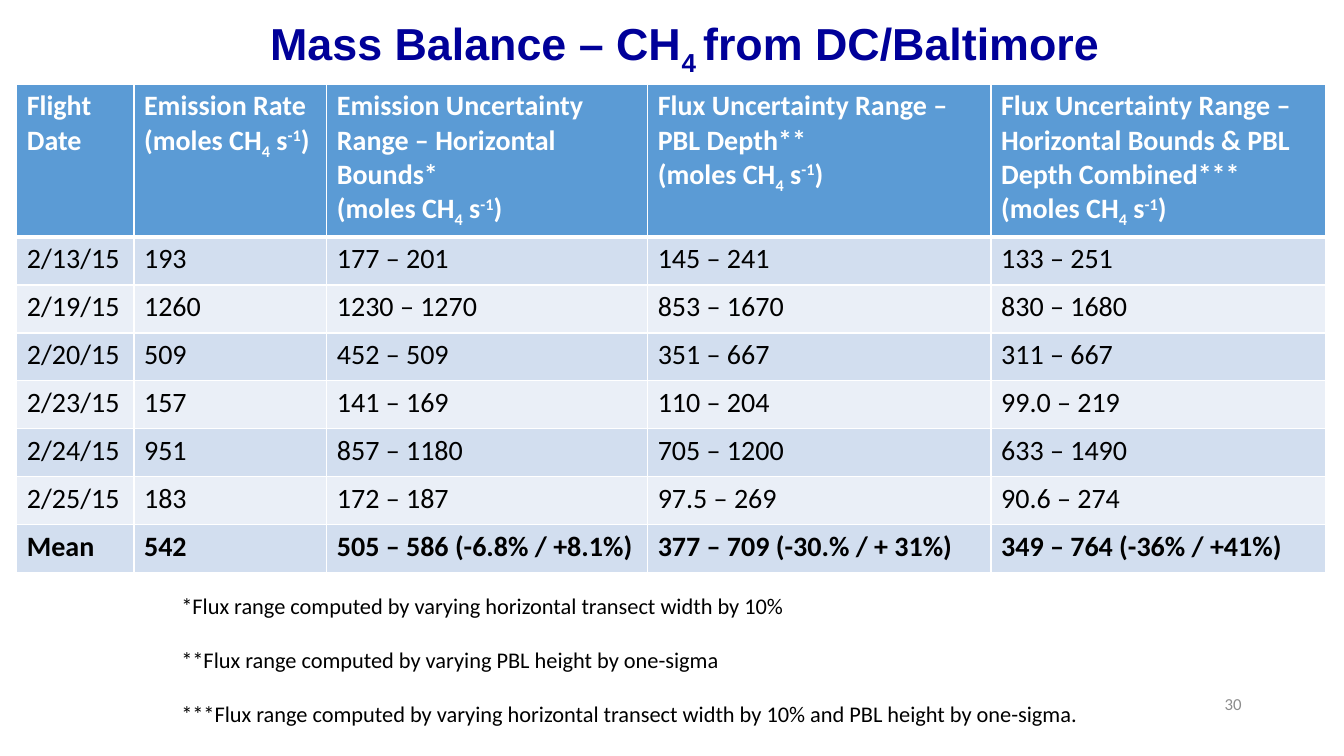
from lxml import etree
from pptx import Presentation
from pptx.dml.color import RGBColor
from pptx.enum.text import MSO_ANCHOR, PP_ALIGN
from pptx.oxml.ns import qn
from pptx.util import Inches, Pt

LEFT, CENTER, RIGHT = PP_ALIGN.LEFT, PP_ALIGN.CENTER, PP_ALIGN.RIGHT
TOP, MIDDLE = MSO_ANCHOR.TOP, MSO_ANCHOR.MIDDLE
COLUMNS, ROWS = 80, 45
BASELINES = {"_": "-25000", "^": "30000"}
UNIT = "(moles CH|_4| s|^-1|)"

HEADERS = [
    ["Flight Date"],
    ["Emission Rate", UNIT],
    ["Emission Uncertainty Range – Horizontal Bounds*", UNIT],
    ["Flux Uncertainty Range – PBL Depth**", UNIT],
    ["Flux Uncertainty Range – Horizontal Bounds & PBL Depth Combined***", UNIT],
]
FLIGHTS = [
    ["2/13/15", "193", "177 – 201", "145 – 241", "133 – 251"],
    ["2/19/15", "1260", "1230 – 1270", "853 – 1670", "830 – 1680"],
    ["2/20/15", "509", "452 – 509", "351 – 667", "311 – 667"],
    ["2/23/15", "157", "141 – 169", "110 – 204", "99.0 – 219"],
    ["2/24/15", "951", "857 – 1180", "705 – 1200", "633 – 1490"],
    ["2/25/15", "183", "172 – 187", "97.5 – 269", "90.6 – 274"],
    ["Mean", "542", "505 – 586 (-6.8% / +8.1%)",
     "377 – 709 (-30.% / + 31%)", "349 – 764 (-36% / +41%)"],
]
FOOTNOTES = [
    "*Flux range computed by varying horizontal transect width by 10%",
    "**Flux range computed by varying PBL height by one-sigma",
    "***Flux range computed by varying horizontal transect width by 10% "
    "and PBL height by one-sigma.",
]


def rgb(value):
    return RGBColor.from_string(value)


class Deck:
    header_fill, bands = "5B9BD5", ("D2DEEF", "EAEFF7")
    white, black, navy, gray = "FFFFFF", "000000", "000099", "8C8C8C"

    def __init__(self):
        self.prs = Presentation()
        self.prs.slide_width, self.prs.slide_height = Inches(13.333), Inches(7.5)
        self.s = self.prs.slides.add_slide(self.prs.slide_layouts[6])

    def x(self, columns):
        return int(self.prs.slide_width * columns / COLUMNS)

    def y(self, rows):
        return int(self.prs.slide_height * rows / ROWS)

    def box(self, left, top, width, height):
        return self.x(left), self.y(top), self.x(width), self.y(height)

    def paragraphs(self, tf, lines, size, color, bold=False, font="Calibri",
                   align=LEFT, gap=0, spacing=1.0):
        for i, line in enumerate(lines):
            p = tf.add_paragraph() if i else tf.paragraphs[0]
            p.alignment, p.line_spacing = align, spacing
            if i and gap:
                p.space_before = Pt(gap)
            p.font.name, p.font.size, p.font.bold = font, Pt(size), bold
            p.font.color.rgb = rgb(color)
            for piece in line.split("|"):
                r = p.add_run()
                baseline = BASELINES.get(piece[0])
                r.text = piece[1:] if baseline else piece
                if baseline:
                    r.font._element.set("baseline", baseline)

    def text(self, place, lines, size, color, anchor=TOP, **style):
        tf = self.s.shapes.add_textbox(*self.box(*place)).text_frame
        tf.word_wrap, tf.vertical_anchor = True, anchor
        self.paragraphs(tf, lines, size, color, **style)

    def borders(self, cell, widths):
        tcPr = cell._tc.get_or_add_tcPr()
        for side, width in zip("LRTB", widths):
            ln = etree.SubElement(tcPr, qn(f"a:ln{side}"), w=str(Pt(width)))
            fill = etree.SubElement(ln, qn("a:solidFill"))
            etree.SubElement(fill, qn("a:srgbClr"), val=self.white)

    def table(self, left, top, widths, heights, content, size):
        place = self.box(left, top, sum(widths), sum(heights))
        table = self.s.shapes.add_table(len(heights), len(widths), *place).table
        for column, width in zip(table.columns, widths):
            column.width = self.x(width)
        last = len(content) - 1
        for i, (height, row) in enumerate(zip(heights, content)):
            table.rows[i].height = self.y(height)
            header = i == 0
            fill = self.header_fill if header else self.bands[(i - 1) % 2]
            for j, lines in enumerate(row):
                cell = table.cell(i, j)
                self.borders(cell, (1, 1, 3 if i == 1 else 1, 3 if header else 1))
                cell.fill.solid()
                cell.fill.fore_color.rgb = rgb(fill)
                self.paragraphs(cell.text_frame, lines, size,
                                self.white if header else self.black,
                                bold=header or i == last)


def main():
    deck = Deck()
    deck.text((4.26, 0.3, 73, 4.68), ["Mass Balance – CH|_4 |from DC/Baltimore"],
              32, deck.navy, anchor=MIDDLE, bold=True, font="Arial",
              align=CENTER, spacing=0.9)
    content = [HEADERS] + [[[value] for value in row] for row in FLIGHTS]
    deck.table(1, 5, [6.98, 11.48, 19.1, 20.44, 19.9],
               [9.12] + [2.85] * len(FLIGHTS), content, 20)
    deck.text((10.2, 34.92, 57.66, 10.08), FOOTNOTES, 16, deck.black, gap=19.5)
    deck.text((56.5, 40.68, 18, 2.4), ["30"], 12, deck.gray,
              anchor=MIDDLE, align=RIGHT)
    deck.prs.save("out.pptx")


if __name__ == "__main__":
    main()
